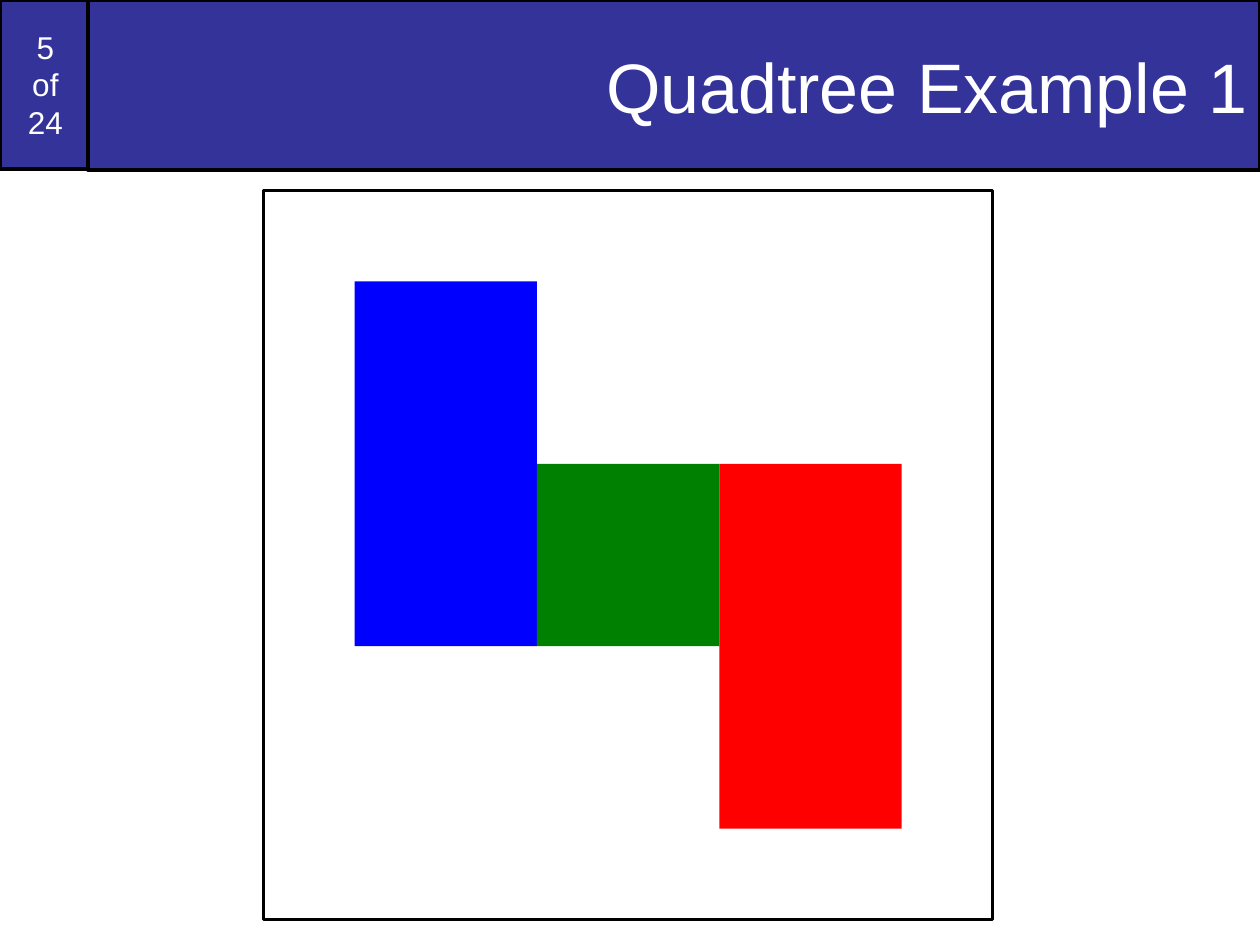
from pptx import Presentation
from pptx.dml.color import RGBColor
from pptx.enum.shapes import MSO_SHAPE
from pptx.enum.text import MSO_ANCHOR, PP_ALIGN
from pptx.util import Inches, Pt

COLORS = {
    "banner": "333399",
    "outline": "000000",
    "white": "FFFFFF",
    "blue": "0000FF",
    "red": "FF0000",
    "green": "008000",
}
REGION_LEFT, REGION_TOP, REGION_SIDE = 2.09, 1.51, 5.79
CELL = REGION_SIDE / 8
BLOCKS = [
    ("blue", 1, 1, 2, 4),
    ("red", 5, 3, 2, 4),
    ("green", 3, 3, 2, 2),
]


def rgb(name):
    """Return the named colour."""
    return RGBColor.from_string(COLORS[name])


def add_box(shapes, left, top, width, height, fill, outline=None):
    """Add a filled rectangle, outlined when a width in points is given."""
    box = shapes.add_shape(
        MSO_SHAPE.RECTANGLE, Inches(left), Inches(top), Inches(width), Inches(height)
    )
    box.shadow.inherit = False
    box.fill.solid()
    box.fill.fore_color.rgb = rgb(fill)
    if outline:
        box.line.color.rgb = rgb("outline")
        box.line.width = Pt(outline)
    else:
        box.line.fill.background()
    return box


def add_banner(shapes, left, width, height, text, size, align):
    """Add a header panel with white text."""
    banner = add_box(shapes, left, 0, width, height, "banner", outline=2)
    frame = banner.text_frame
    frame.word_wrap = True
    frame.vertical_anchor = MSO_ANCHOR.MIDDLE
    paragraph = frame.paragraphs[0]
    paragraph.text = text
    paragraph.alignment = align
    paragraph.font.name = "Arial"
    paragraph.font.size = Pt(size)
    paragraph.font.color.rgb = rgb("white")


def add_region(shapes):
    """Add the square region with its coloured blocks on an 8 by 8 grid."""
    region = shapes.add_group_shape().shapes
    add_box(region, REGION_LEFT, REGION_TOP, REGION_SIDE, REGION_SIDE, "white", outline=1.75)
    for color, column, row, columns, rows in BLOCKS:
        add_box(
            region,
            REGION_LEFT + column * CELL,
            REGION_TOP + row * CELL,
            columns * CELL,
            rows * CELL,
            color,
        )


def main():
    """Build and save the quadtree slide."""
    deck = Presentation()
    deck.slide_width, deck.slide_height = Inches(10), Inches(7.5)
    shapes = deck.slides.add_slide(deck.slide_layouts[6]).shapes
    add_banner(shapes, 0, 0.72, 1.34, "5\vof\v24", 18, PP_ALIGN.CENTER)
    add_banner(shapes, 0.7, 9.3, 1.35, "Quadtree Example 1", 40, PP_ALIGN.RIGHT)
    add_region(shapes)
    deck.save("out.pptx")


if __name__ == "__main__":
    main()
